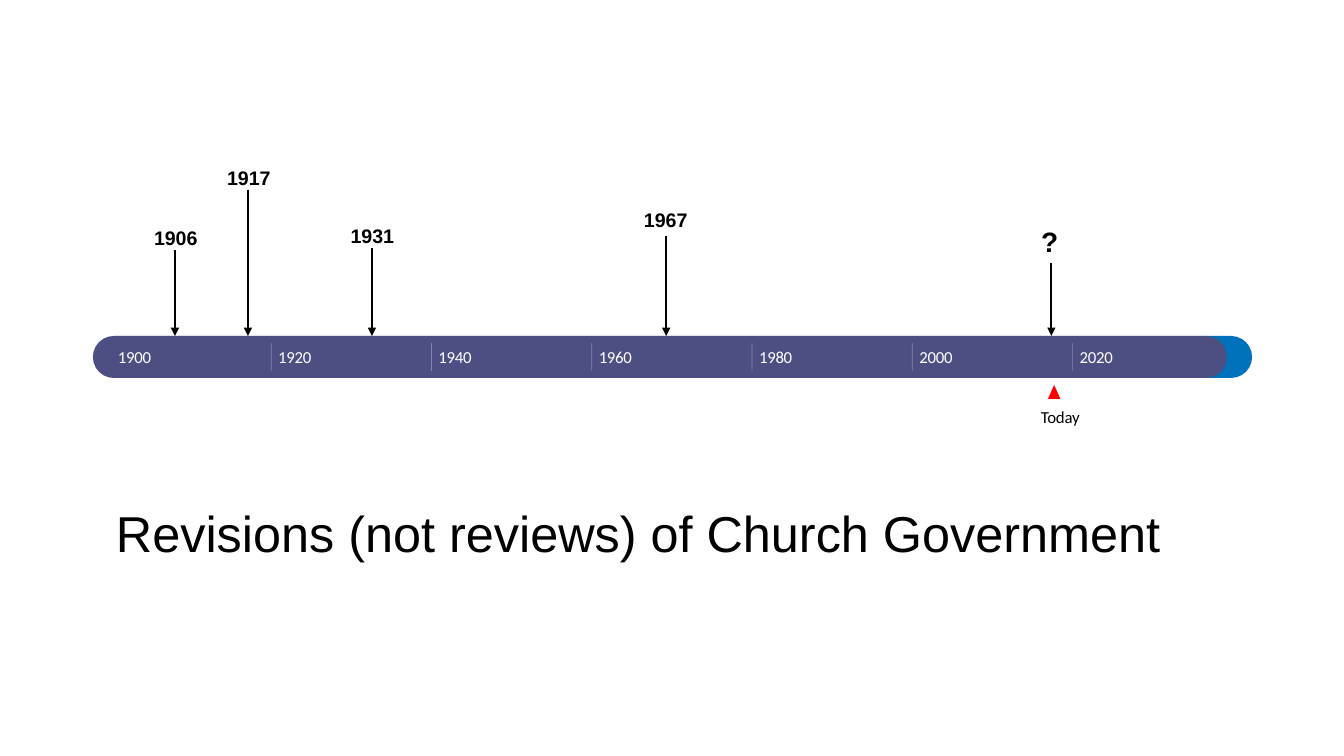
from lxml.etree import SubElement
from pptx import Presentation
from pptx.dml.color import RGBColor
from pptx.enum.shapes import MSO_CONNECTOR, MSO_SHAPE
from pptx.enum.text import MSO_ANCHOR, PP_ALIGN
from pptx.oxml.ns import qn
from pptx.util import Pt

COLORS = {"bar": "0072BC", "elapsed": "FF0000", "today": "FF0000",
          "text": "000000", "scale": "FFFFFF"}
BAR_TOP, BAR_HEIGHT = 240, 30

prs = Presentation()
prs.slide_width, prs.slide_height = Pt(960), Pt(540)
slide = prs.slides.add_slide(prs.slide_layouts[5])
shapes = slide.shapes


def write(text, left, top, width, height, size, font="Arial", color="text",
          bold=False, align=PP_ALIGN.CENTER, spacing=0, wrap=False, holder=None):
    box = holder or shapes.add_textbox(0, 0, 0, 0)
    box.left, box.top, box.width, box.height = Pt(left), Pt(top), Pt(width), Pt(height)
    frame = box.text_frame
    frame.text = text
    frame.word_wrap = wrap
    frame.vertical_anchor = MSO_ANCHOR.MIDDLE
    frame.margin_left = frame.margin_right = frame.margin_top = frame.margin_bottom = 0
    paragraph = frame.paragraphs[0]
    paragraph.alignment = align
    run = paragraph.runs[0]
    run.font.size, run.font.name, run.font.bold = Pt(size), font, bold
    run.font.color.rgb = RGBColor.from_string(COLORS[color])
    if spacing:
        run.font._element.set("spc", str(spacing))


def draw_line(x, top, bottom, color, weight):
    line = shapes.add_connector(MSO_CONNECTOR.STRAIGHT, Pt(x), Pt(top), Pt(x), Pt(bottom))
    line.line.color.rgb = RGBColor.from_string(COLORS[color])
    line.line.width = Pt(weight)
    SubElement(line._element.spPr, qn("a:effectLst"))
    return line.line._get_or_add_ln()


write("Revisions (not reviews) of Church Government", 82.8, 358.6, 765.4, 43.5, 36,
      align=PP_ALIGN.LEFT, wrap=True, holder=shapes.title)

for preset, color, left, top, width, height in [
    (MSO_SHAPE.ROUNDED_RECTANGLE, "bar", 66.4, BAR_TOP, 828, BAR_HEIGHT),
    (MSO_SHAPE.ROUNDED_RECTANGLE, "elapsed", 66.4, BAR_TOP, 810, BAR_HEIGHT),
    (MSO_SHAPE.ISOSCELES_TRIANGLE, "today", 748.5, 275, 9, 10),
]:
    part = shapes.add_shape(preset, Pt(left), Pt(top), Pt(width), Pt(height))
    part.shadow.inherit = False
    part.fill.solid()
    part.fill.fore_color.rgb = RGBColor.from_string(COLORS[color])
    part.line.fill.background()
    if preset == MSO_SHAPE.ROUNDED_RECTANGLE:
        part.adjustments[0] = 0.5
    if color == "elapsed":
        tint = part._element.spPr.find(qn("a:solidFill"))[0]
        SubElement(tint, qn("a:alpha"), val="30000")

write("Today", 743, 290.5, 28.8, 14.4, 12, font="Calibri", spacing=-10)

for step, year in enumerate(range(1900, 2021, 20)):
    tick = 79.2 + 114.5 * step
    if step:
        divider = draw_line(tick, 245, 265, "scale", 0.5)
        SubElement(divider.find(qn("a:solidFill"))[0], qn("a:alpha"), val="30000")
    write(str(year), tick + 5, 247.8, 24, 14.4, 12, font="Calibri", color="scale",
          align=PP_ALIGN.LEFT, spacing=-20)

revisions = [
    ("1906", 125.6, 170, 14, 125, 178.6, -10),
    ("1917", 177.8, 126.6, 14, 177.1, 135.4, -10),
    ("1931", 266, 168.5, 14, 265.7, 177.1, -10),
    ("1967", 475.6, 156.8, 14, 475.9, 168.5, 0),
    ("?", 749.9, 172.2, 20, 751, 187.9, 0),
]
for revision, center, middle, size, arrow_x, arrow_top, spacing in revisions:
    write(revision, center - 22, middle - 12, 44, 24, size, bold=True, spacing=spacing)
    arrow = draw_line(arrow_x, arrow_top, BAR_TOP, "text", 1.5)
    SubElement(arrow, qn("a:tailEnd"), type="triangle")

prs.save("out.pptx")
